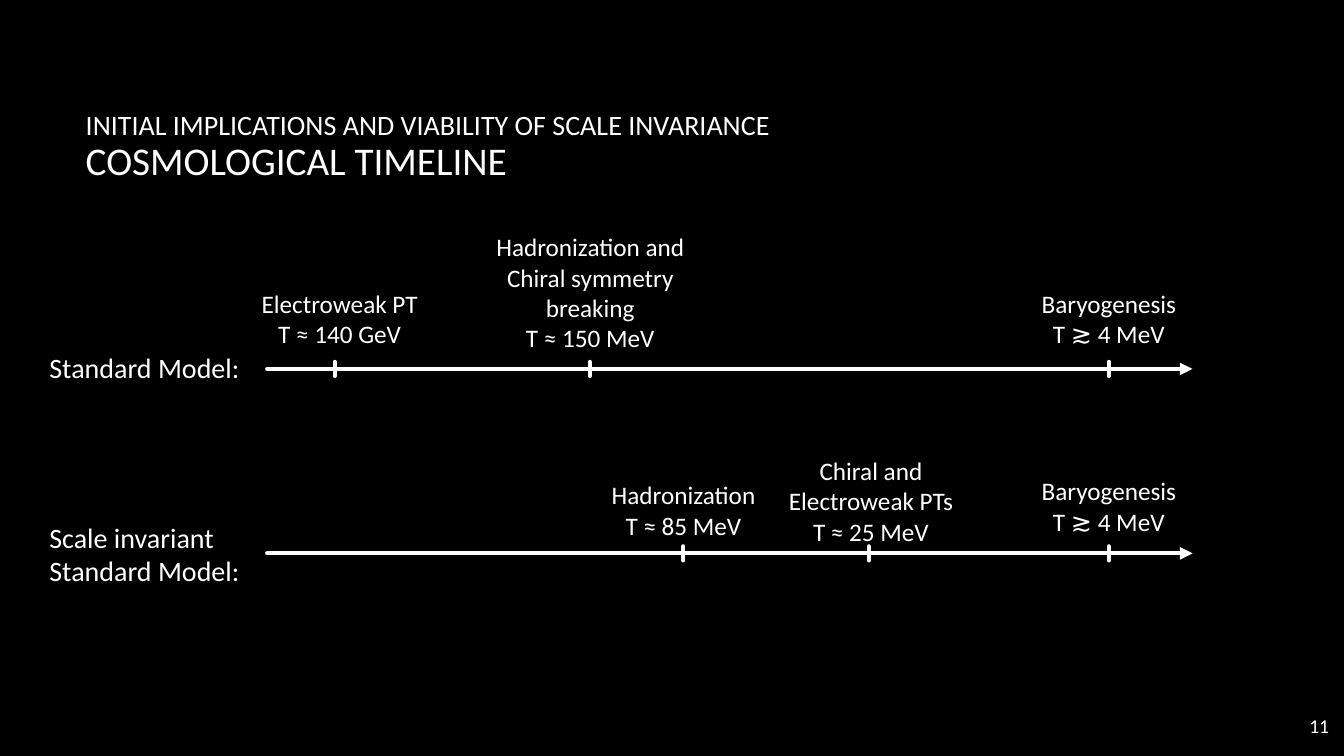
from dataclasses import dataclass

from lxml import etree
from pptx import Presentation
from pptx.dml.color import RGBColor
from pptx.enum.shapes import MSO_CONNECTOR
from pptx.enum.text import MSO_ANCHOR, MSO_AUTO_SIZE, PP_ALIGN
from pptx.oxml.ns import qn
from pptx.util import Inches, Pt

LEFT, CENTER = PP_ALIGN.LEFT, PP_ALIGN.CENTER
MIDDLE = MSO_ANCHOR.MIDDLE
FIT = MSO_AUTO_SIZE.SHAPE_TO_FIT_TEXT
STRAIGHT = MSO_CONNECTOR.STRAIGHT

FONT, WHITE, BLACK = "Calibri", "FFFFFF", "000000"
WIDE, HIGH = Inches(13.33), Inches(7.5)
# The grid has 100 columns and 100 rows
COL, ROW = WIDE / 100, HIGH / 100
START, END = 19.88, 88.73
TICK = 0.93  # rows above and below an axis

Box = tuple[float, float, float, float]


@dataclass
class Event:
    tick: float
    text: str
    box: Box


@dataclass
class Axis:
    row: float
    name: str
    box: Box
    events: list[Event]


AXES = [
    Axis(48.8, "Standard Model:", (2.93, 45.73, 16.95, 5.87), [
        Event(24.9, "Electroweak PT\nT ≈ 140 GeV", (18.3, 37.47, 13.95, 9.47)),
        Event(43.88, "Hadronization and Chiral symmetry breaking\nT ≈ 150 MeV",
              (35.93, 30, 15.98, 17.47)),
        Event(82.5, "Baryogenesis\nT ≳ 4 MeV", (75.53, 37.47, 13.95, 9.47)),
    ]),
    Axis(73.2, "Scale invariant Standard Model:", (2.93, 68.13, 16.95, 10.27), [
        Event(50.85, "Hadronization\nT ≈ 85 MeV", (43.88, 62.8, 13.95, 9.47)),
        Event(64.65, "Chiral and Electroweak PTs T ≈ 25 MeV",
              (57.53, 59.6, 14.55, 13.47)),
        Event(82.5, "Baryogenesis\nT ≳ 4 MeV", (75.53, 62.27, 13.95, 9.47)),
    ]),
]


def color(code: str) -> RGBColor:
    return RGBColor.from_string(code)


def place(box: Box) -> tuple[int, int, int, int]:
    x, y, w, h = box
    return round(x * COL), round(y * ROW), round(w * COL), round(h * ROW)


def style(font, size: float) -> None:
    font.name, font.size = FONT, Pt(size)
    font.color.rgb = color(WHITE)


def write(slide, text: str, box: Box, size: float = 18, align=LEFT) -> None:
    frame = slide.shapes.add_textbox(*place(box)).text_frame
    frame.word_wrap = True
    frame.auto_size = FIT
    frame.text = text
    for para in frame.paragraphs:
        para.alignment = align
        for run in para.runs:
            style(run.font, size)


def draw(slide, x1: float, y1: float, x2: float, y2: float,
         arrow: bool = False) -> None:
    link = slide.shapes.add_connector(
        STRAIGHT, round(x1 * COL), round(y1 * ROW),
        round(x2 * COL), round(y2 * ROW))
    link.line.color.rgb = color(WHITE)
    link.line.width = Pt(3)
    line = link.line._get_or_add_ln()
    line.set("cap", "rnd")
    if arrow:
        etree.SubElement(line, qn("a:tailEnd"), type="triangle")
    etree.SubElement(link._element.spPr, qn("a:effectLst"))


def head(slide) -> None:
    title = slide.shapes.title
    title.left, title.top, title.width, title.height = place(
        (5.63, 8.93, 83.1, 21.2))
    frame = title.text_frame
    frame.vertical_anchor = MIDDLE
    para = frame.paragraphs[0]
    para.alignment, para.line_spacing = LEFT, 0.9
    run = para.add_run()
    run.text = "INITIAL IMPLICATIONS AND VIABILITY OF SCALE INVARIANCE"
    style(run.font, 20)
    para.add_line_break()
    run = para.add_run()
    run.text = "COSMOLOGICAL TIMELINE"
    style(run.font, 28)


def main() -> None:
    deck = Presentation()
    deck.slide_width, deck.slide_height = WIDE, HIGH
    slide = deck.slides.add_slide(deck.slide_layouts[5])
    fill = slide.background.fill
    fill.solid()
    fill.fore_color.rgb = color(BLACK)

    head(slide)

    # Timelines with their ticks and labels
    for axis in AXES:
        draw(slide, START, axis.row, END, axis.row, arrow=True)
        write(slide, axis.name, axis.box, size=20)
        for event in axis.events:
            draw(slide, event.tick, axis.row + TICK,
                 event.tick, axis.row - TICK)
            write(slide, event.text, event.box, align=CENTER)

    # Page number
    write(slide, "11", (96.68, 93.73, 3.3, 4.53), size=14)
    deck.save("out.pptx")


if __name__ == "__main__":
    main()
